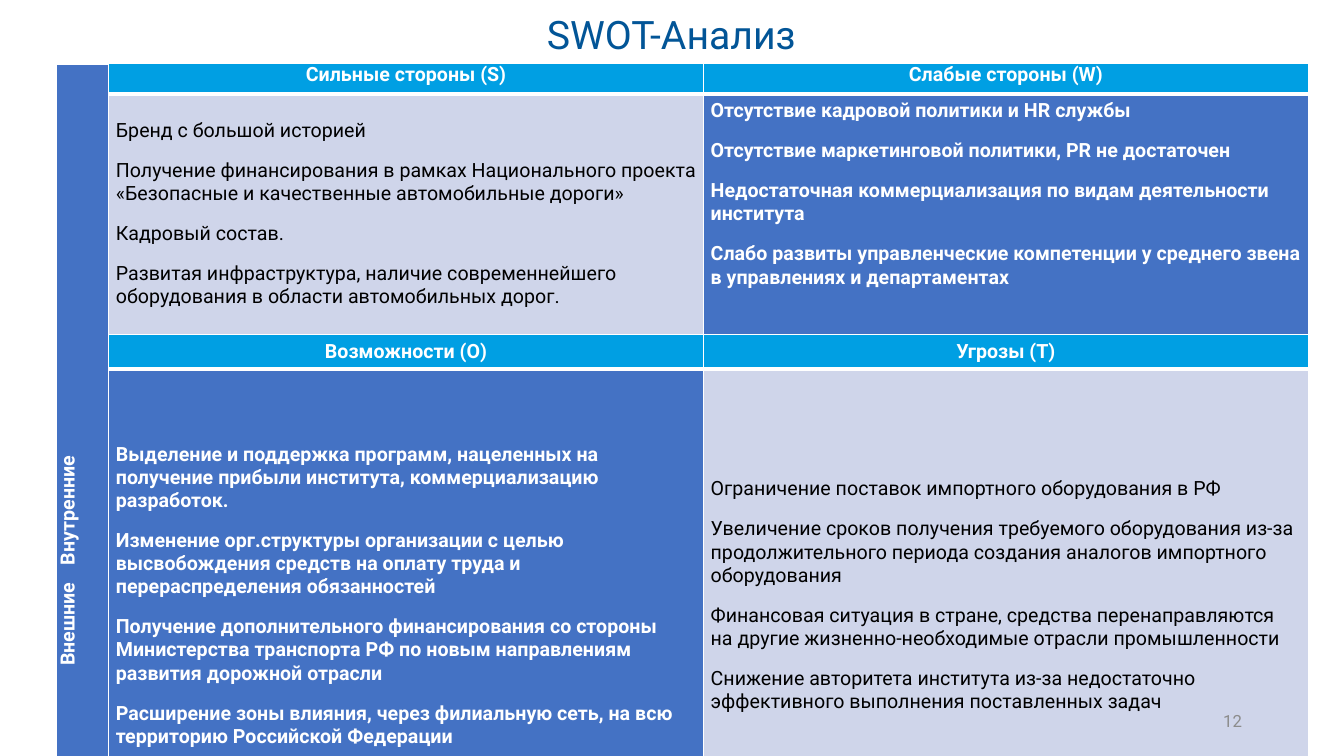
import pptx
import pptx.util
import pptx.dml.color
import pptx.enum.text
import pptx.oxml.ns
import lxml.etree

Cm = pptx.util.Cm
Pt = pptx.util.Pt
RGBColor = pptx.dml.color.RGBColor
ALIGN = pptx.enum.text.PP_ALIGN
ANCHOR = pptx.enum.text.MSO_ANCHOR
qn = pptx.oxml.ns.qn

FONT = "Roboto"
WHITE = RGBColor(0xFF, 0xFF, 0xFF)
BLACK = RGBColor(0, 0, 0)
TITLE_BLUE = RGBColor(0x02, 0x55, 0x97)
HEADER_BLUE = RGBColor(0x00, 0x9F, 0xE3)
DARK_BLUE = RGBColor(0x44, 0x72, 0xC4)
PALE_BLUE = RGBColor(0xCF, 0xD5, 0xEA)
GREY = RGBColor(0x8C, 0x8C, 0x8C)

COLUMN_WIDTHS = (1.32, 14.99, 15.24)
ROW_HEIGHTS = (0.76, 6.07, 0.86, 11.43)

SIDE_LABEL = "Внешние\tВнутренние"
SIDE_INDENT = 3.76
SIDE_TAB = 12.5

STRENGTHS = (
    "Бренд с большой историей",
    "Получение финансирования в рамках Национального проекта «Безопасные и качественные автомобильные дороги»",
    "Кадровый состав.",
    "Развитая инфраструктура, наличие современнейшего оборудования в области автомобильных дорог.",
)
WEAKNESSES = (
    "Отсутствие кадровой политики и HR службы",
    "Отсутствие маркетинговой политики, PR не достаточен",
    "Недостаточная коммерциализация по видам деятельности института",
    "Слабо развиты управленческие компетенции у среднего звена в управлениях и департаментах",
)
OPPORTUNITIES = (
    "Выделение и поддержка программ, нацеленных на получение прибыли института, коммерциализацию разработок.",
    "Изменение орг.структуры организации с целью высвобождения средств на оплату труда и перераспределения обязанностей",
    "Получение дополнительного финансирования со стороны Министерства транспорта РФ по новым направлениям развития дорожной отрасли",
    "Расширение зоны влияния, через филиальную сеть, на всю территорию Российской Федерации",
)
THREATS = (
    "Ограничение поставок импортного оборудования в РФ",
    "Увеличение сроков получения требуемого оборудования из-за продолжительного периода создания аналогов импортного оборудования",
    "Финансовая ситуация в стране, средства перенаправляются на другие жизненно-необходимые отрасли промышленности",
    "Снижение авторитета института из-за недостаточно эффективного выполнения поставленных задач",
)


def write_text(frame, lines, size=14, color=WHITE, bold=False, align=ALIGN.LEFT, before=0):
    frame.word_wrap = True
    for index, line in enumerate(lines):
        paragraph = frame.add_paragraph() if index else frame.paragraphs[0]
        paragraph.alignment = align
        paragraph.space_before = Pt(before)
        run = paragraph.add_run()
        run.text = line
        run.font.name = FONT
        run.font.size = Pt(size)
        run.font.bold = bold
        run.font.color.rgb = color


def set_borders(cell, top=1, bottom=1):
    properties = cell._tc.get_or_add_tcPr()
    for tag, width in (("a:lnL", 1), ("a:lnR", 1), ("a:lnT", top), ("a:lnB", bottom)):
        line = lxml.etree.SubElement(properties, qn(tag), w=str(Pt(width)))
        fill = lxml.etree.SubElement(line, qn("a:solidFill"))
        lxml.etree.SubElement(fill, qn("a:srgbClr"), val=str(WHITE))


def fill_cell(cell, lines, fill, top=1, bottom=1, anchor=ANCHOR.MIDDLE, **text_format):
    set_borders(cell, top, bottom)
    cell.fill.solid()
    cell.fill.fore_color.rgb = fill
    cell.margin_left = cell.margin_right = Cm(0.18)
    cell.margin_top = cell.margin_bottom = 0
    cell.vertical_anchor = anchor
    write_text(cell.text_frame, lines, before=12, **text_format)


def add_title(slide, text):
    title = slide.shapes.title
    title.left, title.top, title.width, title.height = Cm(1.42), Cm(0.13), Cm(30.99), Cm(1.45)
    write_text(title.text_frame, [text], size=28, color=TITLE_BLUE, align=ALIGN.CENTER)


def add_side_label(table):
    cell = table.cell(0, 0)
    cell.merge(table.cell(3, 0))
    fill_cell(cell, [SIDE_LABEL], DARK_BLUE, top=3, bottom=3, anchor=ANCHOR.TOP, bold=True)
    cell._tc.tcPr.set("vert", "vert270")
    # A tab stop places the second word beside the upper half
    properties = cell.text_frame.paragraphs[0]._p.get_or_add_pPr()
    properties.set("marL", str(Cm(SIDE_INDENT)))
    properties.set("indent", "0")
    tabs = lxml.etree.SubElement(properties, qn("a:tabLst"))
    lxml.etree.SubElement(tabs, qn("a:tab"), pos=str(Cm(SIDE_TAB)), algn="l")


def add_swot_table(slide):
    frame = slide.shapes.add_table(4, 3, Cm(1.42), Cm(1.6), Cm(sum(COLUMN_WIDTHS)), Cm(sum(ROW_HEIGHTS)))
    table = frame.table
    table.first_row = table.horz_banding = False
    for column, width in zip(table.columns, COLUMN_WIDTHS):
        column.width = Cm(width)
    for row, height in zip(table.rows, ROW_HEIGHTS):
        row.height = Cm(height)
    add_side_label(table)

    # Each quadrant is a header cell with a body cell below it
    quadrants = (
        (0, 1, "Сильные стороны (S)", STRENGTHS, False),
        (0, 2, "Слабые стороны (W)", WEAKNESSES, True),
        (2, 1, "Возможности (O)", OPPORTUNITIES, True),
        (2, 2, "Угрозы (T)", THREATS, False),
    )
    for row, column, heading, lines, dark in quadrants:
        fill_cell(table.cell(row, column), [heading], HEADER_BLUE, bottom=3, bold=True,
                  anchor=ANCHOR.MIDDLE if row else ANCHOR.TOP, align=ALIGN.CENTER)
        fill_cell(table.cell(row + 1, column), lines, DARK_BLUE if dark else PALE_BLUE, top=3,
                  bold=dark, color=WHITE if dark else BLACK)
    # Weaknesses sit a line above the middle
    table.cell(1, 2).margin_bottom = Cm(1)


def add_page_number(slide, number):
    box = slide.shapes.add_textbox(Cm(23.93), Cm(17.65), Cm(7.62), Cm(1.02))
    box.text_frame.vertical_anchor = ANCHOR.MIDDLE
    write_text(box.text_frame, [number], size=12, color=GREY, align=ALIGN.RIGHT)


def main():
    presentation = pptx.Presentation()
    presentation.slide_width = Cm(33.87)
    presentation.slide_height = Cm(19.05)
    slide = presentation.slides.add_slide(presentation.slide_layouts[5])
    add_title(slide, "SWOT-Анализ")
    add_swot_table(slide)
    add_page_number(slide, "12")
    presentation.save("out.pptx")


if __name__ == "__main__":
    main()
